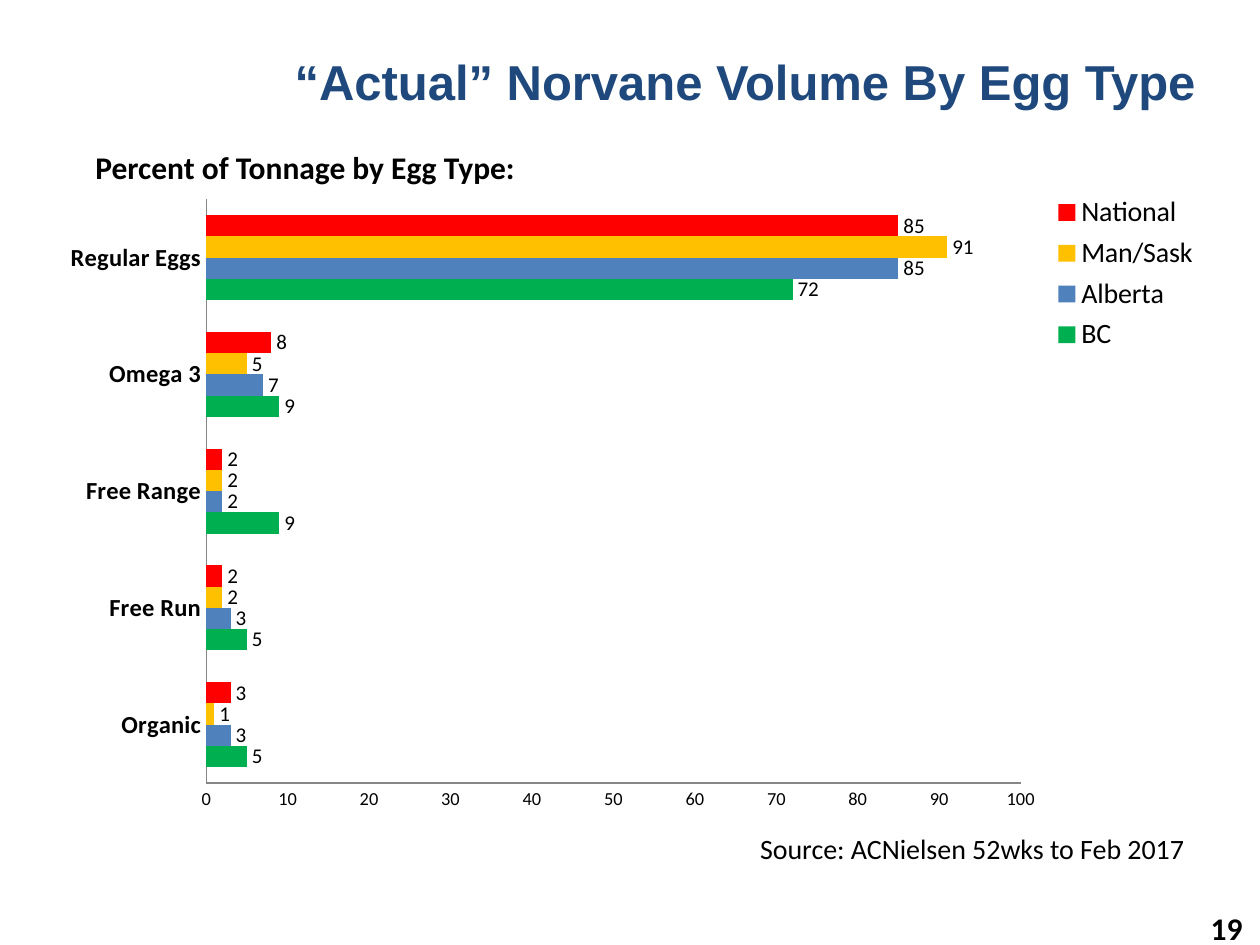
import dataclasses
import typing

import lxml.etree
import pptx
import pptx.chart.data
import pptx.dml.color
import pptx.enum.chart
import pptx.enum.text
import pptx.oxml.ns
import pptx.util

PX = pptx.util.Inches(1) / 126
BLACK = pptx.dml.color.RGBColor(0, 0, 0)
NAVY = pptx.dml.color.RGBColor(0x1F, 0x49, 0x7D)
GREY = pptx.dml.color.RGBColor(0x86, 0x86, 0x86)
GREEN = pptx.dml.color.RGBColor(0x00, 0xB0, 0x50)
BLUE = pptx.dml.color.RGBColor(0x4F, 0x81, 0xBD)
AMBER = pptx.dml.color.RGBColor(0xFF, 0xC0, 0x00)
RED = pptx.dml.color.RGBColor(0xFF, 0x00, 0x00)
LEFT = pptx.enum.text.PP_ALIGN.LEFT
RIGHT = pptx.enum.text.PP_ALIGN.RIGHT
TOP = pptx.enum.text.MSO_ANCHOR.TOP
MIDDLE = pptx.enum.text.MSO_ANCHOR.MIDDLE


@dataclasses.dataclass(frozen=True)
class Label:
    text: str
    box: tuple[int, int, int, int]
    size: int
    bold: bool = True
    align: typing.Any = LEFT
    anchor: typing.Any = TOP
    name: str = "Calibri"
    color: pptx.dml.color.RGBColor = BLACK


@dataclasses.dataclass(frozen=True)
class EggSeries:
    name: str
    color: pptx.dml.color.RGBColor
    values: tuple[int, ...]


TITLE = Label("“Actual” Norvane Volume By Egg Type", (282, 45, 969, 72), 28, name="Arial", color=NAVY)
LABELS = (
    Label("19", (961, 903, 294, 50), 18, align=RIGHT, anchor=MIDDLE),
    Label("Percent of Tonnage by Egg Type:", (83, 142, 1101, 77), 18),
    Label("Source: ACNielsen 52wks to Feb 2017", (116, 825, 1081, 47), 16, bold=False, align=RIGHT),
)
CATEGORIES = ("Organic", "Free Run", "Free Range", "Omega 3", "Regular Eggs")
SERIES = (
    EggSeries("BC", GREEN, (5, 5, 9, 9, 72)),
    EggSeries("Alberta", BLUE, (3, 3, 2, 7, 85)),
    EggSeries("Man/Sask", AMBER, (1, 2, 2, 5, 91)),
    EggSeries("National ", RED, (3, 2, 2, 8, 85)),
)
CHART_BOX = (43, 181, 1191, 653)
PLOT_BOX = (163, 18, 815, 584)
LEGEND_BOX = (1003, 8, 160, 170)


def emu(box: tuple[int, ...]) -> list[int]:
    """Turn px lengths into EMU."""
    return [round(length * PX) for length in box]


def set_attributes(target: typing.Any, **values: typing.Any) -> None:
    """Set each given attribute on an object."""
    for key, value in values.items():
        setattr(target, key, value)


def set_font(font: typing.Any, size: float, bold: bool = False,
             name: str = "Calibri", color: pptx.dml.color.RGBColor = BLACK) -> None:
    """Format a font."""
    set_attributes(font, size=pptx.util.Pt(size), bold=bold, name=name)
    font.color.rgb = color


def write_label(shape: typing.Any, label: Label) -> None:
    """Place a text shape and fill it with its label."""
    set_attributes(shape, **dict(zip(("left", "top", "width", "height"), emu(label.box))))
    frame = shape.text_frame
    frame.text = label.text
    set_attributes(frame, word_wrap=True, vertical_anchor=label.anchor,
                   auto_size=pptx.enum.text.MSO_AUTO_SIZE.NONE)
    paragraph = frame.paragraphs[0]
    paragraph.alignment = label.align
    set_font(paragraph.runs[0].font, label.size, label.bold, label.name, label.color)


def set_layout(parent: typing.Any, index: int, box: tuple[int, ...], inner: bool = False) -> None:
    """Fix the place of a chart part, given in px from the chart corner."""
    qn = pptx.oxml.ns.qn
    for previous in parent.findall(qn("c:layout")):
        parent.remove(previous)
    layout = lxml.etree.Element(qn("c:layout"))
    manual = lxml.etree.SubElement(layout, qn("c:manualLayout"))
    settings = {"layoutTarget": "inner"} if inner else {}
    settings |= {"xMode": "edge", "yMode": "edge"}
    for key, length, whole in zip("xywh", box, CHART_BOX[2:] * 2):
        settings[key] = str(round(length / whole, 3))
    for key, value in settings.items():
        lxml.etree.SubElement(manual, qn(f"c:{key}")).set("val", value)
    parent.insert(index, layout)


def format_axis(axis: typing.Any, size: float, bold: bool) -> None:
    """Give an axis a grey line and plain labels without ticks."""
    no_tick = pptx.enum.chart.XL_TICK_MARK.NONE
    set_attributes(axis, has_major_gridlines=False, major_tick_mark=no_tick, minor_tick_mark=no_tick)
    axis.format.line.color.rgb = GREY
    axis.format.line.width = pptx.util.Pt(0.75)
    set_font(axis.tick_labels.font, size, bold)


def draw_chart(slide: typing.Any) -> None:
    """Draw the clustered bars by egg type."""
    data = pptx.chart.data.CategoryChartData()
    data.categories = CATEGORIES
    for egg_series in SERIES:
        data.add_series(egg_series.name, egg_series.values)
    kind = pptx.enum.chart.XL_CHART_TYPE.BAR_CLUSTERED
    chart = slide.shapes.add_chart(kind, *emu(CHART_BOX), data).chart
    set_attributes(chart, has_title=False, has_legend=True)
    set_font(chart.font, 18)
    format_axis(chart.category_axis, 14, True)
    format_axis(chart.value_axis, 10.5, False)
    set_attributes(chart.value_axis, minimum_scale=0, maximum_scale=100, major_unit=10)
    set_attributes(chart.value_axis.tick_labels, number_format="General", number_format_is_linked=False)
    plot = chart.plots[0]
    set_attributes(plot, gap_width=150, overlap=0, vary_by_categories=False)
    for series, egg_series in zip(plot.series, SERIES):
        series.format.fill.solid()
        series.format.fill.fore_color.rgb = egg_series.color
        set_attributes(series.data_labels, show_value=True, number_format="#,##0",
                       number_format_is_linked=False,
                       position=pptx.enum.chart.XL_LABEL_POSITION.OUTSIDE_END)
        set_font(series.data_labels.font, 12)
    legend = chart.legend
    set_attributes(legend, position=pptx.enum.chart.XL_LEGEND_POSITION.RIGHT, include_in_layout=False)
    set_font(legend.font, 16)
    chart_element = chart.element.find(pptx.oxml.ns.qn("c:chart"))
    set_layout(chart_element.find(pptx.oxml.ns.qn("c:plotArea")), 0, PLOT_BOX, inner=True)
    set_layout(chart_element.find(pptx.oxml.ns.qn("c:legend")), 1, LEGEND_BOX)


def main() -> None:
    """Build and save the slide."""
    presentation = pptx.Presentation()
    set_attributes(presentation, slide_width=round(1260 * PX), slide_height=round(945 * PX))
    slide = presentation.slides.add_slide(presentation.slide_layouts[5])
    write_label(slide.shapes.title, TITLE)
    for label in LABELS:
        write_label(slide.shapes.add_textbox(*emu(label.box)), label)
    draw_chart(slide)
    presentation.save("out.pptx")


if __name__ == "__main__":
    main()
